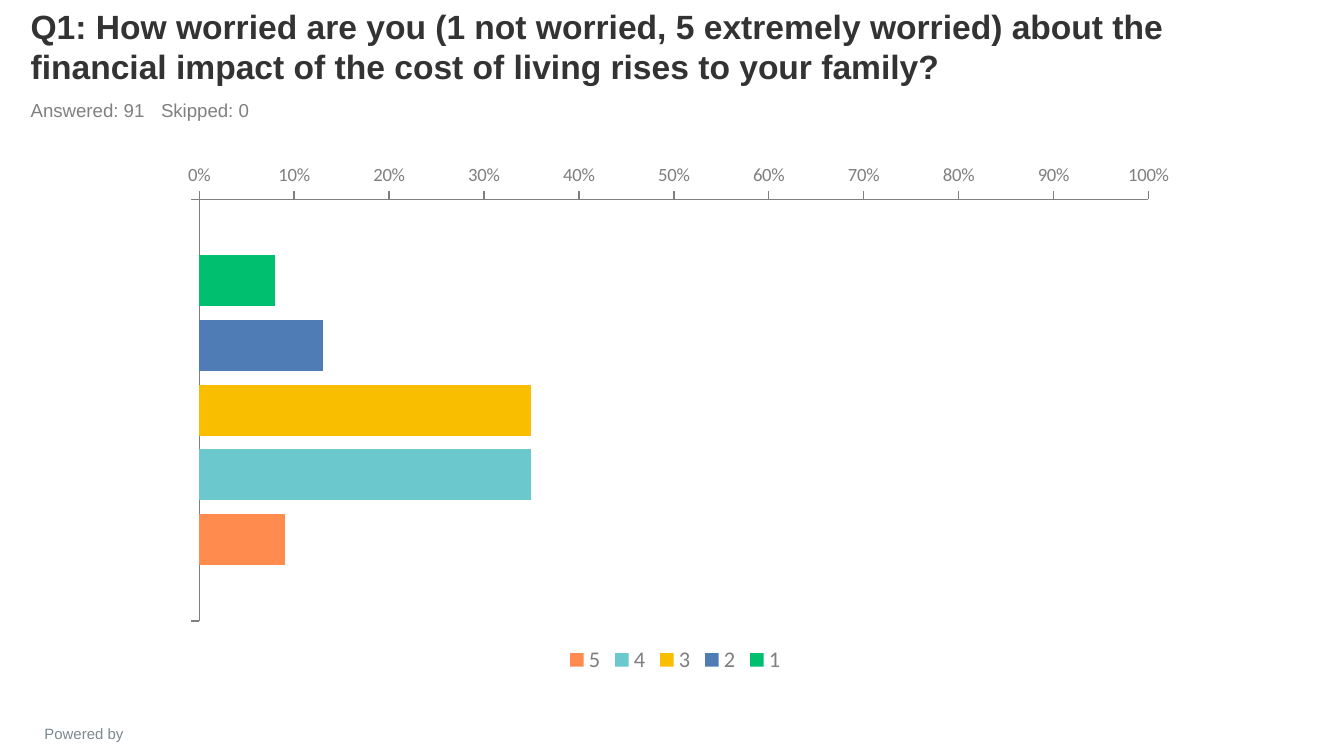
from dataclasses import dataclass

from lxml import etree
from pptx import Presentation
from pptx import util as u
from pptx.chart.data import CategoryChartData
from pptx.dml.color import RGBColor
from pptx.enum import chart as ch
from pptx.enum import text as tx
from pptx.oxml import ns

COLOURS = {
    "title": "333333",
    "subtitle": "808080",
    "footer": "7C878E",
    "axis": "7F7F7F",
    "green": "00BF6F",
    "blue": "507CB6",
    "yellow": "F9BE00",
    "teal": "6BC8CD",
    "orange": "FF8B4F",
}


@dataclass
class Label:
    words: str
    left: float
    top: float
    width: float
    height: float
    size: int
    colour: str
    bold: bool = False
    align: tx.PP_ALIGN = tx.PP_ALIGN.LEFT
    anchor: tx.MSO_ANCHOR = tx.MSO_ANCHOR.TOP
    tab: float | None = None


@dataclass
class Rating:
    name: str
    share: float
    colour: str


LABELS = [
    Label("Powered by", 0.05, 5.34, 1.15, 0.18, 8, "footer", align=tx.PP_ALIGN.CENTER),
    Label(
        "Q1: How worried are you (1 not worried, 5 extremely worried) about the "
        "financial impact of the cost of living rises to your family?",
        0.13, 0.09, 9, 0.6, 18, "title", bold=True, anchor=tx.MSO_ANCHOR.BOTTOM,
    ),
    Label("Answered: 91\tSkipped: 0", 0.13, 0.69, 9, 0.26, 10, "subtitle", tab=0.97),
]

RATINGS = [
    Rating("1", 0.08, "green"),
    Rating("2", 0.13, "blue"),
    Rating("3", 0.35, "yellow"),
    Rating("4", 0.35, "teal"),
    Rating("5", 0.09, "orange"),
]


def rgb(name: str) -> RGBColor:
    return RGBColor.from_string(COLOURS[name])


def style_font(font, size: int, colour: str, face: str) -> None:
    font.name = face
    font.size = u.Pt(size)
    font.color.rgb = rgb(colour)


def add_tab_stop(para, inches: float) -> None:
    tabs = etree.SubElement(para._p.get_or_add_pPr(), ns.qn("a:tabLst"))
    etree.SubElement(tabs, ns.qn("a:tab"), pos=str(u.Inches(inches)), algn="l")


def add_label(page, label: Label) -> None:
    box = page.shapes.add_textbox(
        u.Inches(label.left), u.Inches(label.top),
        u.Inches(label.width), u.Inches(label.height),
    )
    frame = box.text_frame
    frame.word_wrap = True
    frame.vertical_anchor = label.anchor
    frame.text = label.words
    para = frame.paragraphs[0]
    para.alignment = label.align
    if label.tab is not None:
        add_tab_stop(para, label.tab)
    for span in para.runs:
        style_font(span.font, label.size, label.colour, "Arial")
        span.font.bold = label.bold


def style_axis(axis) -> None:
    axis.has_major_gridlines = False
    axis.major_tick_mark = ch.XL_TICK_MARK.OUTSIDE
    axis.minor_tick_mark = ch.XL_TICK_MARK.NONE
    axis.format.line.color.rgb = rgb("axis")
    axis.format.line.width = u.Pt(0.75)
    style_font(axis.tick_labels.font, 10, "axis", "Calibri")


def add_ratings_chart(page, ratings: list[Rating]) -> None:
    data = CategoryChartData(number_format="0%")
    data.categories = [" "]
    for rating in ratings:
        data.add_series(rating.name, [rating.share])
    chart = page.shapes.add_chart(
        ch.XL_CHART_TYPE.BAR_CLUSTERED,
        u.Inches(1.2), u.Inches(1.15), u.Inches(7.65), u.Inches(3.9), data,
    ).chart
    chart.has_title = False
    style_font(chart.font, 18, "title", "Calibri")

    plot = chart.plots[0]
    plot.vary_by_categories = False
    plot.gap_width = 219
    plot.overlap = -27
    for series, rating in zip(plot.series, ratings):
        series.format.fill.solid()
        series.format.fill.fore_color.rgb = rgb(rating.colour)

    # The share scale crosses past the only category, which keeps it at the bottom.
    style_axis(chart.category_axis)
    chart.category_axis.reverse_order = True
    chart.category_axis.crosses_at = 2
    chart.category_axis.tick_label_position = ch.XL_TICK_LABEL_POSITION.LOW

    style_axis(chart.value_axis)
    chart.value_axis.minimum_scale = 0
    chart.value_axis.maximum_scale = 1
    chart.value_axis.major_unit = 0.1
    chart.value_axis.tick_labels.number_format = "0%"
    chart.value_axis.tick_labels.number_format_is_linked = False

    chart.has_legend = True
    chart.legend.position = ch.XL_LEGEND_POSITION.BOTTOM
    chart.legend.include_in_layout = False
    style_font(chart.legend.font, 12, "axis", "Calibri")


def main() -> None:
    deck = Presentation()
    deck.slide_width = u.Inches(10)
    deck.slide_height = deck.slide_width * 9 // 16
    page = deck.slides.add_slide(deck.slide_layouts[6])
    for label in LABELS:
        add_label(page, label)
    add_ratings_chart(page, RATINGS)
    deck.save("out.pptx")


if __name__ == "__main__":
    main()
